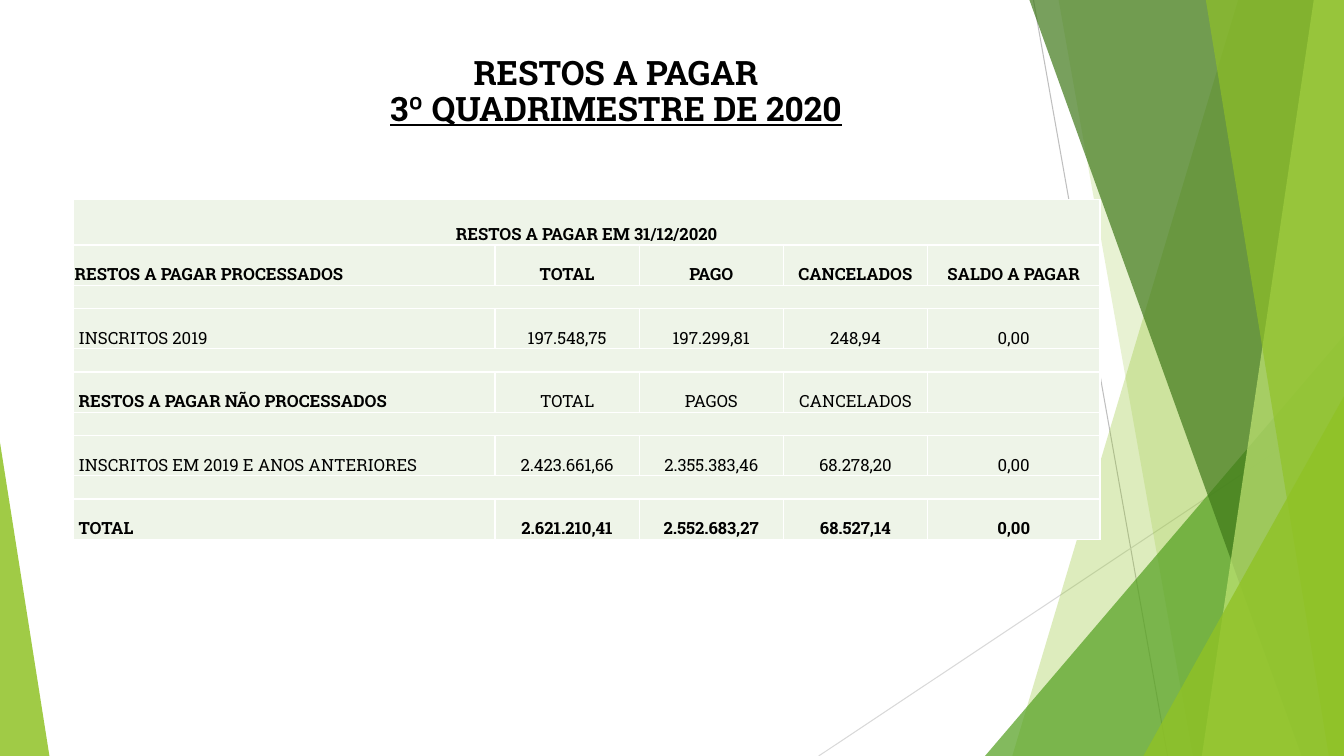
import pptx
import pptx.dml.color
import pptx.enum.dml
import pptx.enum.shapes
import pptx.enum.text
import pptx.oxml
import pptx.oxml.ns
import pptx.util
import lxml.etree

Inches = pptx.util.Inches
Pt = pptx.util.Pt
ALIGN = pptx.enum.text.PP_ALIGN
ANCHOR = pptx.enum.text.MSO_ANCHOR
qn = pptx.oxml.ns.qn
WIDTH, HEIGHT = 13.33, 7.5


def colour(value):
    return pptx.dml.color.RGBColor.from_string(value)


class SlideBuilder:
    font = "Roboto Slab"
    ink = "000000"
    cell_fill = "EEF4E8"
    border = "FFFFFF"

    def __init__(self, page):
        self.page = page

    def line(self, start, end, tone):
        connector = self.page.shapes.add_connector(
            pptx.enum.shapes.MSO_CONNECTOR.STRAIGHT,
            *(Inches(value) for value in start + end))
        connector.line.color.rgb = colour(tone)
        connector.line.width = Pt(0.75)
        lxml.etree.SubElement(connector._element.spPr, qn("a:effectLst"))

    def paint(self, shape, tone, opacity):
        shape.shadow.inherit = False
        shape.line.fill.background()
        shape.fill.solid()
        shape.fill.fore_color.rgb = colour(tone)
        solid = shape._element.spPr.find(qn("a:solidFill"))
        alpha = lxml.etree.SubElement(solid[0], qn("a:alpha"))
        alpha.set("val", str(opacity * 1000))

    def band(self, top_left, bottom_left, tone, opacity):
        builder = self.page.shapes.build_freeform(
            Inches(top_left), 0, scale=1.0)
        corners = [(WIDTH, 0), (WIDTH, HEIGHT), (bottom_left, HEIGHT)]
        builder.add_line_segments(
            [(Inches(x), Inches(y)) for x, y in corners], close=True)
        self.paint(builder.convert_to_shape(), tone, opacity)

    def triangle(self, left, top, width, apex, tone, opacity):
        shape = self.page.shapes.add_shape(
            pptx.enum.shapes.MSO_SHAPE.ISOSCELES_TRIANGLE,
            Inches(left), Inches(top), Inches(width), Inches(HEIGHT - top))
        shape.adjustments[0] = apex
        self.paint(shape, tone, opacity)

    def span(self, para, text, size, bold, underline=None):
        span = para.add_run()
        span.text = text
        span.font.name = self.font
        span.font.size = Pt(size)
        span.font.bold = bold
        span.font.underline = underline
        span.font.color.rgb = colour(self.ink)

    def title(self, first, second):
        box = self.page.shapes.title
        box.left, box.top = Inches(1.52), Inches(0.51)
        box.width, box.height = Inches(9.18), Inches(1.05)
        self.page.shapes._spTree.append(box._element)
        frame = box.text_frame
        frame.word_wrap = True
        frame.auto_size = pptx.enum.text.MSO_AUTO_SIZE.NONE
        frame.vertical_anchor = ANCHOR.TOP
        para = frame.paragraphs[0]
        para.alignment = ALIGN.CENTER
        para.line_spacing = 0.9
        self.span(para, first, 24, True)
        para.add_line_break()
        self.span(para, second, 24, True, True)

    def cell_borders(self, cell):
        properties = cell._tc.get_or_add_tcPr()
        for index, side in enumerate(("lnL", "lnR", "lnT", "lnB")):
            edge = pptx.oxml.parse_xml(
                f'<a:{side} {pptx.oxml.ns.nsdecls("a")} w="12700">'
                f'<a:solidFill><a:srgbClr val="{self.border}"/></a:solidFill>'
                f'</a:{side}>')
            properties.insert(index, edge)

    def cell(self, cell, text, bold, align, indent):
        cell.fill.solid()
        cell.fill.fore_color.rgb = colour(self.cell_fill)
        cell.vertical_anchor = ANCHOR.BOTTOM
        cell.margin_left = Inches(indent)
        cell.margin_right = cell.margin_top = Inches(0.01)
        cell.margin_bottom = 0
        self.cell_borders(cell)
        para = cell.text_frame.paragraphs[0]
        para.alignment = align
        if text:
            self.span(para, text, 12, bold)
        else:
            ending = lxml.etree.SubElement(para._p, qn("a:endParaRPr"))
            ending.set("sz", "1200")
            lxml.etree.SubElement(ending, qn("a:latin")).set(
                "typeface", self.font)

    def table(self, left, top, widths, rows):
        heights = [0.45] + [0.4 if len(texts) > 1 else 0.23
                            for texts, _, _ in rows[1:]]
        table = self.page.shapes.add_table(
            len(rows), len(widths), Inches(left), Inches(top),
            Inches(sum(widths)), Inches(sum(heights))).table
        table.first_row = table.horz_banding = False
        for column, width in zip(table.columns, widths):
            column.width = Inches(width)
        for r, (texts, bolds, indent) in enumerate(rows):
            table.rows[r].height = Inches(heights[r])
            merged = len(texts) == 1
            if merged:
                table.cell(r, 0).merge(table.cell(r, len(widths) - 1))
            for c, text in enumerate(texts):
                label = c == 0 and not merged
                self.cell(table.cell(r, c), text, bolds[min(c, 1)],
                          ALIGN.LEFT if label else ALIGN.CENTER,
                          indent if label else 0.01)


def main():
    deck = pptx.Presentation()
    deck.slide_width, deck.slide_height = Inches(WIDTH), Inches(HEIGHT)
    slide = SlideBuilder(deck.slides.add_slide(deck.slide_layouts[5]))

    slide.line((10.25, 0), (11.58, HEIGHT), "BFBFBF")
    slide.line((WIDTH, 4.03), (8.12, HEIGHT), "D9D9D9")
    slide.band(12.28, 10.04, "90C226", 30)
    slide.band(10.5, 11.83, "90C226", 20)
    slide.triangle(9.77, 3.33, 3.56, 1, "54A021", 72)
    slide.band(10.21, 12.91, "3F7819", 70)
    slide.band(13.03, 11.92, "C0E474", 70)
    slide.band(11.96, 13.18, "90C226", 65)
    slide.triangle(11.34, 3.93, 1.99, 1, "90C226", 80)
    slide.triangle(0, 4.39, 0.49, 0, "90C226", 85)

    slide.title("RESTOS A PAGAR", "3º QUADRIMESTRE DE 2020")

    bold, plain, mixed = (True, True), (False, False), (True, False)
    spacer = ([""], plain, 0.01)
    slide.table(0.73, 1.98, [4.18, 1.43, 1.43, 1.43, 1.71], [
        (["RESTOS A PAGAR EM 31/12/2020"], bold, 0.01),
        (["RESTOS A PAGAR PROCESSADOS", "TOTAL", "PAGO", "CANCELADOS",
          "SALDO A PAGAR"], bold, 0.01),
        spacer,
        (["INSCRITOS 2019", "197.548,75", "197.299,81", "248,94", "0,00"],
         plain, 0.05),
        spacer,
        (["RESTOS A PAGAR NÃO PROCESSADOS", "TOTAL", "PAGOS", "CANCELADOS",
          ""], mixed, 0.05),
        spacer,
        (["INSCRITOS EM 2019 E ANOS ANTERIORES", "2.423.661,66",
          "2.355.383,46", "68.278,20", "0,00"], plain, 0.05),
        spacer,
        (["TOTAL", "2.621.210,41", "2.552.683,27", "68.527,14", "0,00"],
         bold, 0.05),
    ])
    deck.save("out.pptx")


if __name__ == "__main__":
    main()
